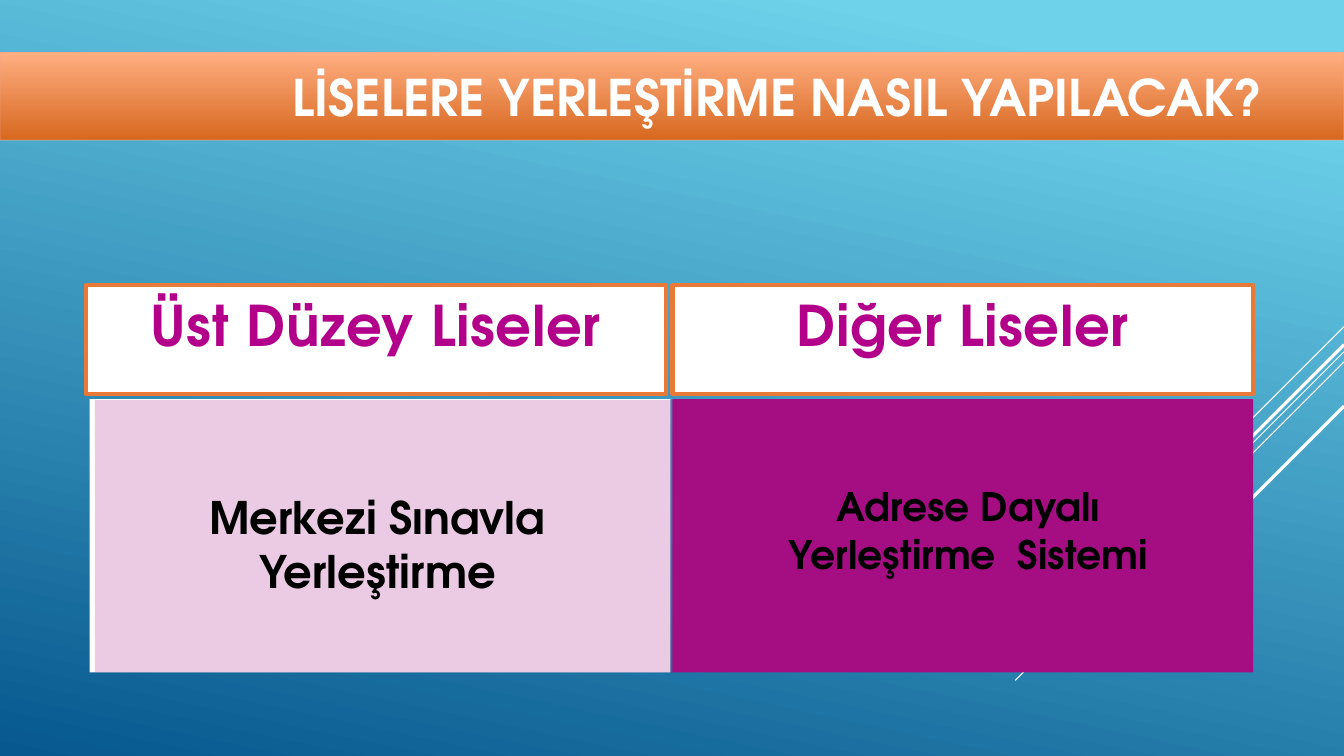
import pptx
import pptx.util
import pptx.dml.color
import pptx.enum.shapes
import pptx.enum.text
import pptx.oxml.ns
import lxml.etree

WIDTH, HEIGHT = 13.33, 7.5
FONT = "TeX Gyre Adventor"
WHITE, BLACK, PURPLE, MAGENTA, ORANGE = "FFFFFF", "000000", "A50E82", "B3008A", "E87937"
BACKGROUND = ((10, "6ED2EB"), (100, "06588E"))
BANNER = ((0, "FFAE82"), (100, "D7681F"))
TITLE = "LİSELERE YERLEŞTİRME NASIL YAPILACAK?"
HEADINGS = ["Üst Düzey Liseler", "Diğer Liseler"]
RAYS = [(3.24, 1, 0.75), (3.49, 3.26, 0.75), (3.59, 2.07, 0.75), (3.42, 1.91, 2.25), (4.03, 1.39, 2.25)]

LEFT, COLUMN, GAP = 0.85, 5.76, 0.06
HEADING_TOP, HEADING_HEIGHT = 2.83, 1.08
PANEL_TOP, PANEL_HEIGHT = 3.96, 2.71
SECOND = LEFT + COLUMN + GAP
PANELS = [
    (SECOND, PANEL_TOP, PURPLE, 100),
    (LEFT + 0.04, PANEL_TOP, WHITE, 100),
    (LEFT + 0.09, PANEL_TOP + 0.01, PURPLE, 21),
]
METHODS = [
    (["Merkezi Sınavla Yerleştirme"], 32, (1.62, 4.81, 4.25, 1.18)),
    (["Adrese Dayalı", "Yerleştirme  Sistemi"], 28, (6.77, 4.74, 5.67, 1.04)),
]


def color(value):
    return pptx.dml.color.RGBColor.from_string(value)


def inches(*lengths):
    return [pptx.util.Inches(length) for length in lengths]


def set_alpha(fill_parent, percent):
    for value in fill_parent.iter(pptx.oxml.ns.qn("a:srgbClr")):
        lxml.etree.SubElement(value, pptx.oxml.ns.qn("a:alpha")).set("val", str(percent * 1000))


def set_gradient(fill, stops, clockwise):
    fill.gradient()
    fill.gradient_angle = 360 - clockwise
    for stop, (position, value) in zip(fill.gradient_stops, stops):
        stop.position = position / 100
        stop.color.rgb = color(value)


def add_rectangle(slide, box, fill=None, line=None, weight=0.75):
    shape = slide.shapes.add_shape(pptx.enum.shapes.MSO_SHAPE.RECTANGLE, *inches(*box))
    shape.shadow.inherit = False
    if fill:
        shape.fill.solid()
        shape.fill.fore_color.rgb = color(fill)
    if line:
        shape.line.color.rgb = color(line)
        shape.line.width = pptx.util.Pt(weight)
    else:
        shape.line.fill.background()
    return shape


def write(shape, lines, size, value, align="CENTER", anchor="TOP", spacing=0):
    frame = shape.text_frame
    frame.word_wrap = True
    frame.vertical_anchor = pptx.enum.text.MSO_ANCHOR[anchor]
    frame.text = "\n".join(lines)
    for paragraph in frame.paragraphs:
        paragraph.alignment = pptx.enum.text.PP_ALIGN[align]
        for run in paragraph.runs:
            run.font.name, run.font.size, run.font.bold = FONT, pptx.util.Pt(size), True
            run.font.color.rgb = color(value)
            if spacing:
                run.font._element.set("spc", str(int(spacing * 100)))


def add_ray(slide, top, reach, weight):
    ends = inches(WIDTH, top, WIDTH - reach, top + reach)
    ray = slide.shapes.add_connector(pptx.enum.shapes.MSO_CONNECTOR.STRAIGHT, *ends)
    ray.line.color.rgb = color(WHITE)
    ray.line.width = pptx.util.Pt(weight)
    lxml.etree.SubElement(ray._element.spPr, pptx.oxml.ns.qn("a:effectLst"))


def main():
    """Build the slide on placement in high schools."""
    presentation = pptx.Presentation()
    presentation.slide_width, presentation.slide_height = inches(WIDTH, HEIGHT)
    slide = presentation.slides.add_slide(presentation.slide_layouts[6])
    set_gradient(slide.background.fill, BACKGROUND, 102)
    for ray in RAYS:
        add_ray(slide, *ray)

    banner = add_rectangle(slide, (0, 0.52, WIDTH, 0.87), line="EEA78F")
    set_alpha(banner.line._ln, 60)
    set_gradient(banner.fill, BANNER, 90)
    write(banner, [TITLE], 36, WHITE, "LEFT", "MIDDLE")
    banner.text_frame.margin_left = pptx.util.Inches(2.9)

    for left, top, fill, alpha in PANELS:
        panel = add_rectangle(slide, (left, top, COLUMN, PANEL_TOP + PANEL_HEIGHT - top), fill)
        if alpha < 100:
            set_alpha(panel._element.spPr, alpha)
    for lines, size, box in METHODS:
        write(slide.shapes.add_textbox(*inches(*box)), lines, size, BLACK)
    for index, heading in enumerate(HEADINGS):
        box = (LEFT + index * (COLUMN + GAP), HEADING_TOP, COLUMN, HEADING_HEIGHT)
        write(add_rectangle(slide, box, WHITE, ORANGE, 3), [heading], 40, MAGENTA, spacing=0.5)
    presentation.save("out.pptx")


if __name__ == "__main__":
    main()
